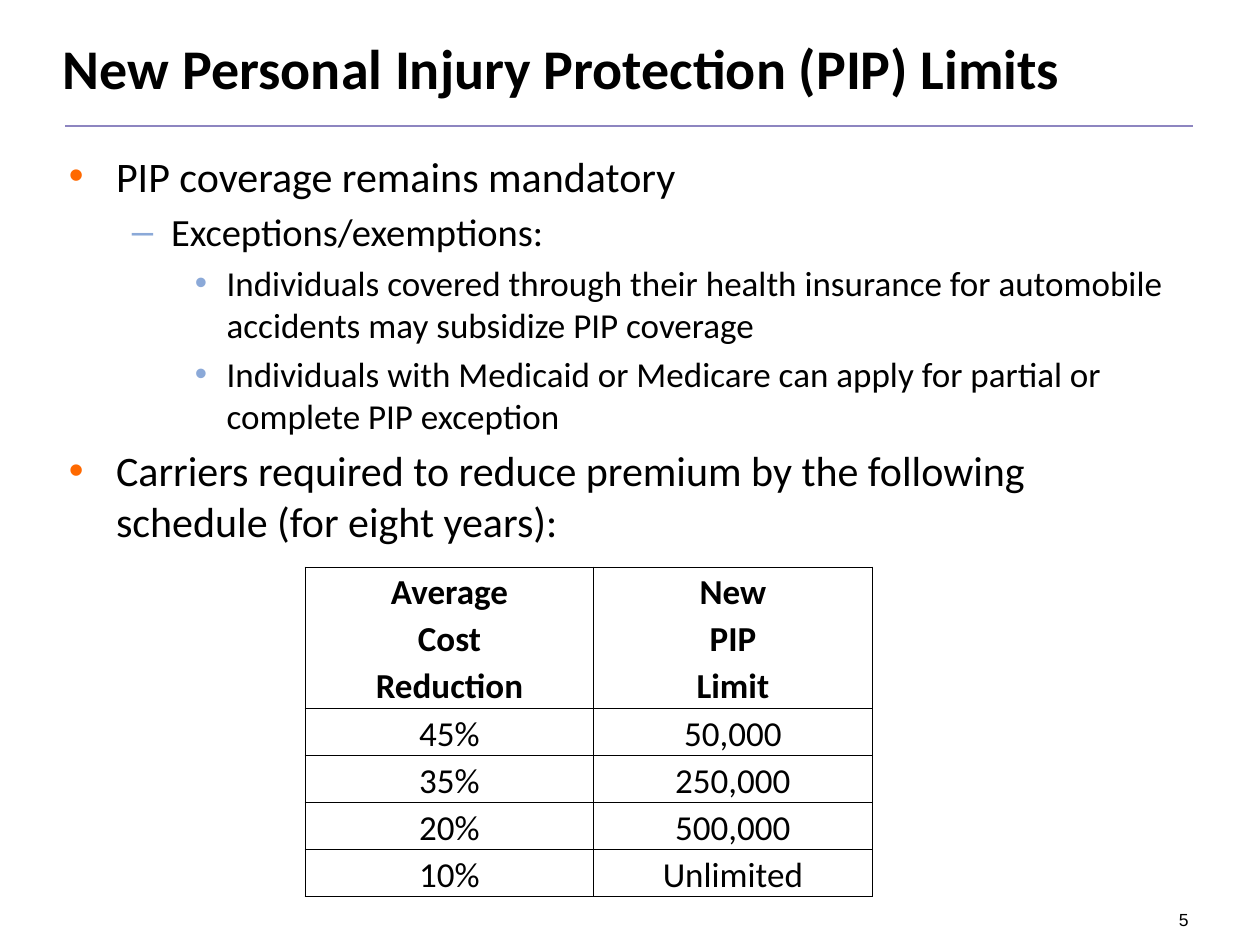
from lxml import etree
from pptx import Presentation
from pptx.dml.color import RGBColor
from pptx.enum.shapes import MSO_CONNECTOR
from pptx.enum.text import MSO_ANCHOR, PP_ALIGN
from pptx.oxml.ns import qn
from pptx.util import Cm, Pt

LEFT, CENTER, RIGHT = PP_ALIGN.LEFT, PP_ALIGN.CENTER, PP_ALIGN.RIGHT
BOTTOM = MSO_ANCHOR.BOTTOM
STRAIGHT = MSO_CONNECTOR.STRAIGHT

BLACK = RGBColor(0x00, 0x00, 0x00)
WHITE = RGBColor(0xFF, 0xFF, 0xFF)
PURPLE = RGBColor(0x8D, 0x85, 0xC0)
ORANGE = RGBColor(0xFF, 0x69, 0x00)
BLUE = RGBColor(0x8B, 0xA9, 0xD8)

TITLE = "New Personal Injury Protection (PIP) Limits"
PAGE = "5"
BODY = [
    (0, "PIP coverage remains mandatory"),
    (1, "Exceptions/exemptions:"),
    (2, "Individuals covered through their health insurance for automobile "
        "accidents may subsidize PIP coverage"),
    (2, "Individuals with Medicaid or Medicare can apply for partial or "
        "complete PIP exception"),
    (0, "Carriers required to reduce premium by the following schedule "
        "(for eight years):"),
]
LEVELS = [
    dict(size=24, char="•", color=ORANGE, margin=Cm(0.95), hang=Cm(0.95)),
    dict(size=22, char="–", color=BLUE, margin=Cm(2.06), hang=Cm(0.79)),
    dict(size=20, char="•", color=BLUE, margin=Cm(3.18), hang=Cm(0.64)),
]
HEADER_ROWS = 3
ROWS = [
    ("Average", "New"),
    ("Cost", "PIP"),
    ("Reduction", "Limit"),
    ("45%", "50,000"),
    ("35%", "250,000"),
    ("20%", "500,000"),
    ("10%", "Unlimited"),
]
COLUMNS = [Cm(5.82), Cm(5.61)]
ROW_HEIGHT = Cm(0.95)


def write(p, text, size=20, font="Calibri", bold=False, align=LEFT):
    p.alignment = align
    r = p.add_run()
    r.text = text
    r.font.size, r.font.name, r.font.bold = Pt(size), font, bold
    r.font.color.rgb = BLACK


def add_box(x, y, w, h, wrap=True):
    tf = slide.shapes.add_textbox(x, y, w, h).text_frame
    tf.word_wrap = wrap
    return tf


def add_bullet(p, char, color, margin, hang):
    pPr = p._p.get_or_add_pPr()
    pPr.set("marL", str(margin))
    pPr.set("indent", str(-hang))
    clr = etree.SubElement(pPr, qn("a:buClr"))
    etree.SubElement(clr, qn("a:srgbClr"), val=str(color))
    etree.SubElement(pPr, qn("a:buFont"), typeface="Arial")
    etree.SubElement(pPr, qn("a:buChar"), char=char)


def set_borders(cell, hidden):
    tcPr = cell._tc.get_or_add_tcPr()
    for side in "LRTB":
        ln = etree.SubElement(tcPr, qn(f"a:ln{side}"), w=str(Pt(0.5)))
        if side in hidden:
            etree.SubElement(ln, qn("a:noFill"))
        else:
            fill = etree.SubElement(ln, qn("a:solidFill"))
            etree.SubElement(fill, qn("a:srgbClr"), val=str(BLACK))


prs = Presentation()
prs.slide_width, prs.slide_height = Cm(25.4), Cm(19.05)
slide = prs.slides.add_slide(prs.slide_layouts[6])

tf = add_box(Cm(23.27), Cm(17.98), Cm(0.94), Cm(0.81), wrap=False)
tf.paragraphs[0].line_spacing = 1.5
write(tf.paragraphs[0], PAGE, size=10, font="Arial", align=RIGHT)

rule = slide.shapes.add_connector(STRAIGHT, Cm(1.32), Cm(2.54), Cm(24.05), Cm(2.54))
rule.line.color.rgb = PURPLE
rule.line.width = Pt(1.5)
etree.SubElement(rule._element.spPr, qn("a:effectLst"))

tf = add_box(Cm(1.02), Cm(0.56), Cm(23.24), Cm(1.63))
write(tf.paragraphs[0], TITLE, size=32, bold=True)

tf = add_box(Cm(1.14), Cm(2.9), Cm(22.96), Cm(14.17))
for i, (level, text) in enumerate(BODY):
    style = LEVELS[level]
    p = tf.add_paragraph() if i else tf.paragraphs[0]
    p.level = level
    if i:
        p.space_before = Pt(style["size"] * 0.2)
    add_bullet(p, style["char"], style["color"], style["margin"], style["hang"])
    write(p, text, size=style["size"])

table = slide.shapes.add_table(len(ROWS), len(COLUMNS), Cm(6.15), Cm(11.43),
                               sum(COLUMNS), ROW_HEIGHT * len(ROWS)).table
table.first_row = table.horz_banding = False
for col, width in zip(table.columns, COLUMNS):
    col.width = width
for i, values in enumerate(ROWS):
    table.rows[i].height = ROW_HEIGHT
    hidden = ("T" if 0 < i < HEADER_ROWS else "") + ("B" if i < HEADER_ROWS - 1 else "")
    for j, text in enumerate(values):
        cell = table.cell(i, j)
        cell.margin_left = cell.margin_right = cell.margin_top = Cm(0.03)
        cell.margin_bottom = 0
        cell.vertical_anchor = BOTTOM
        set_borders(cell, hidden)
        cell.fill.solid()
        cell.fill.fore_color.rgb = WHITE
        write(cell.text_frame.paragraphs[0], text, bold=i < HEADER_ROWS, align=CENTER)

prs.save("out.pptx")
